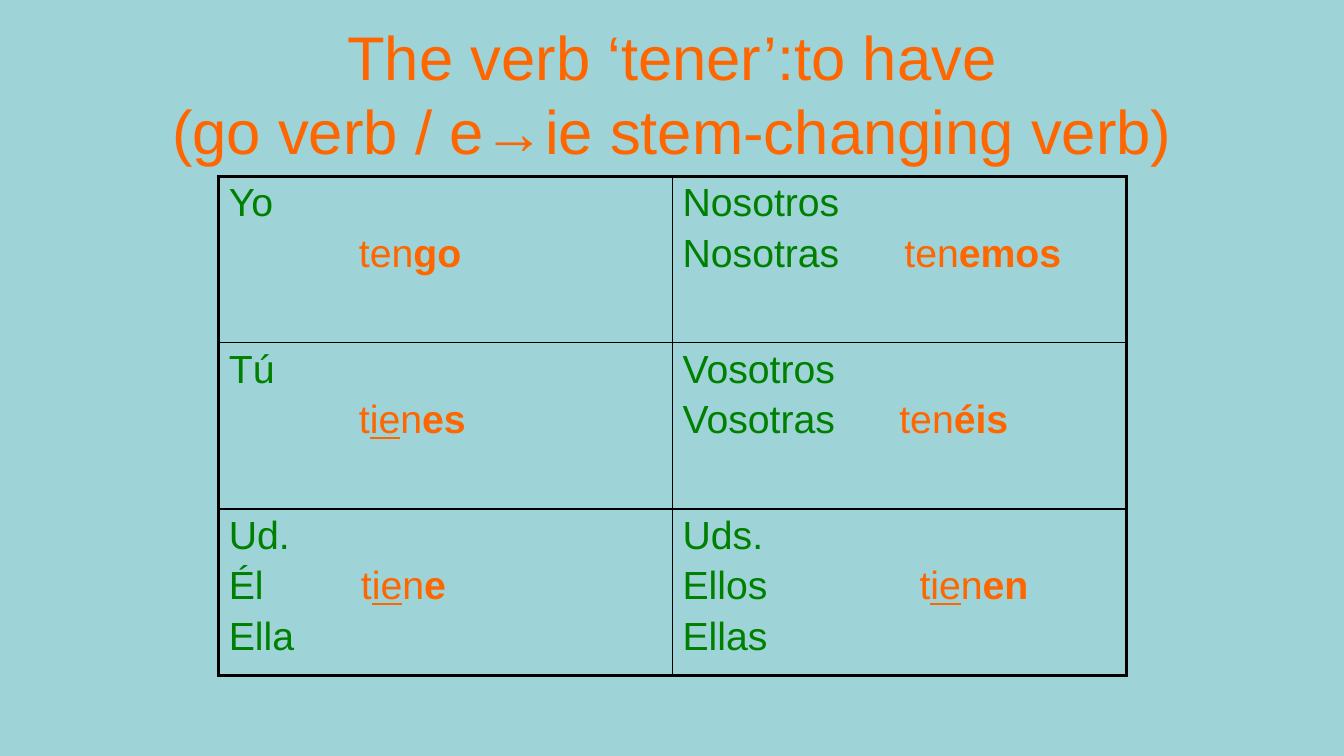
from lxml.etree import SubElement
from pptx import Presentation
from pptx.dml.color import RGBColor
from pptx.enum.text import MSO_ANCHOR, PP_ALIGN
from pptx.oxml.ns import qn
from pptx.util import Inches, Pt

BACKGROUND = RGBColor(0x9E, 0xD3, 0xD7)
ORANGE = RGBColor(0xFF, 0x66, 0x00)
GREEN = RGBColor(0x00, 0x80, 0x00)
BORDER = RGBColor(0x00, 0x00, 0x00)
FONT = "Arial"
OUTER_BORDER, INNER_BORDER = Pt(2.25), Pt(1)

TITLE = "The verb ‘tener’:to have\v(go verb / e→ie stem-changing verb)"

# Each cell: pronoun lines, verb as (stem, stem change, stem end, ending), verb indent in inches.
# The verb always stands on the second line.
CONJUGATION = [
    [(["Yo", ""], ("ten", "", "", "go"), 1.29),
     (["Nosotros", "Nosotras"], ("ten", "", "", "emos"), 2.2)],
    [(["Tú", ""], ("t", "ie", "n", "es"), 1.29),
     (["Vosotros", "Vosotras"], ("ten", "", "", "éis"), 2.15)],
    [(["Ud.", "Él", "Ella"], ("t", "ie", "n", "e"), 1.31),
     (["Uds.", "Ellos", "Ellas"], ("t", "ie", "n", "en"), 2.35)],
]


def style(run, size, color, bold=False, underline=False):
    run.font.name = FONT
    run.font.size = Pt(size)
    run.font.color.rgb = color
    run.font.bold = bold
    run.font.underline = underline


def add_title(slide, left, top, width, height):
    title = slide.shapes.add_textbox(left, top, width, height)
    frame = title.text_frame
    frame.word_wrap = True
    frame.vertical_anchor = MSO_ANCHOR.MIDDLE
    frame.text = TITLE
    heading = frame.paragraphs[0]
    heading.alignment = PP_ALIGN.CENTER
    for run in heading.runs:
        style(run, 44, ORANGE)


def set_borders(cell, widths):
    """Widths in the order left, right, top, bottom."""
    properties = cell._tc.get_or_add_tcPr()
    for side, width in zip("LRTB", widths):
        line = SubElement(properties, qn(f"a:ln{side}"), w=str(width))
        fill = SubElement(line, qn("a:solidFill"))
        SubElement(fill, qn("a:srgbClr"), val=str(BORDER))


def add_verb(paragraph, verb, indent):
    # Tab stop that lines up the verb
    stops = SubElement(paragraph._p.get_or_add_pPr(), qn("a:tabLst"))
    SubElement(stops, qn("a:tab"), pos=str(Inches(indent)), algn="l")
    stem, change, stem_end, ending = verb
    for text, bold, underline in [("\t" + stem, False, False), (change, False, True),
                                  (stem_end, False, False), (ending, True, False)]:
        if text:
            run = paragraph.add_run()
            run.text = text
            style(run, 28, ORANGE, bold, underline)


def fill_cell(cell, pronouns, verb, indent):
    cell.text_frame.text = "\n".join(pronouns)
    for index, paragraph in enumerate(cell.text_frame.paragraphs):
        for run in paragraph.runs:
            style(run, 28, GREEN)
        if index > 0:
            paragraph.space_before = Pt(4.75)
        if index == 1:
            add_verb(paragraph, verb, indent)


def add_conjugation_table(slide, left, top, width, height):
    rows, columns = len(CONJUGATION), len(CONJUGATION[0])
    table = slide.shapes.add_table(rows, columns, left, top, width, height).table
    table.first_row = False
    table.horz_banding = False
    for row, cells in enumerate(CONJUGATION):
        for column, content in enumerate(cells):
            cell = table.cell(row, column)
            on_edge = (column == 0, column == columns - 1, row == 0, row == rows - 1)
            set_borders(cell, [OUTER_BORDER if edge else INNER_BORDER for edge in on_edge])
            cell.fill.background()
            fill_cell(cell, *content)


def main():
    presentation = Presentation()
    presentation.slide_width = Inches(13.33)
    presentation.slide_height = Inches(7.5)
    slide = presentation.slides.add_slide(presentation.slide_layouts[6])
    slide.background.fill.solid()
    slide.background.fill.fore_color.rgb = BACKGROUND

    add_title(slide, Inches(0.67), Inches(0.3), Inches(12), Inches(1.25))
    add_conjugation_table(slide, Inches(2.17), Inches(1.75), Inches(9), Inches(4.95))
    presentation.save("out.pptx")


if __name__ == "__main__":
    main()
